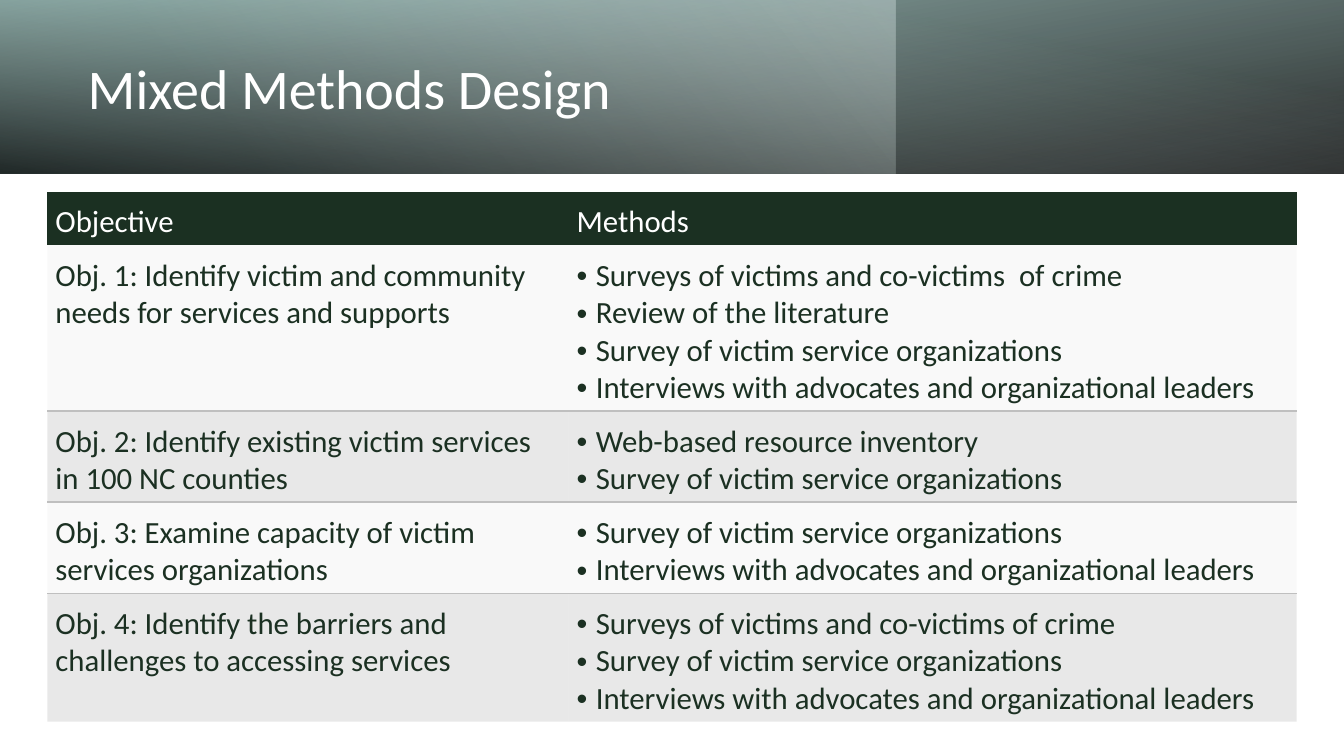
"""Build the Mixed Methods Design slide: gradient header band, title and objectives table."""
from lxml.etree import SubElement
from pptx import Presentation
from pptx.dml.color import RGBColor as RGB
from pptx.enum.text import MSO_ANCHOR as Anchor
from pptx.oxml.ns import qn
from pptx.util import Inches, Pt

BLACK, WHITE = RGB(0, 0, 0), RGB(255, 255, 255)
TEAL, MIST, PALE = RGB(0x92, 0xBA, 0xB5), RGB(0xD6, 0xE5, 0xE3), RGB(0xE6, 0xEF, 0xEE)
FOREST, LIGHT, SILVER = RGB(0x1B, 0x30, 0x22), RGB(0xF2, 0xF2, 0xF2), RGB(0xBF, 0xBF, 0xBF)

TITLE = "Mixed Methods Design"
HEADINGS = ("Objective", "Methods")
OBJECTIVES = [
    ("Obj. 1: Identify victim and community needs for services and supports",
     ["Surveys of victims and co-victims  of crime",
      "Review of the literature",
      "Survey of victim service organizations",
      "Interviews with advocates and organizational leaders"]),
    ("Obj. 2: Identify existing victim services in 100 NC counties",
     ["Web-based resource inventory",
      "Survey of victim service organizations"]),
    ("Obj. 3: Examine capacity of victim services organizations",
     ["Survey of victim service organizations ",
      "Interviews with advocates and organizational leaders"]),
    ("Obj. 4: Identify the barriers and challenges to accessing services",
     ["Surveys of victims and co-victims of crime",
      "Survey of victim service organizations",
      "Interviews with advocates and organizational leaders"]),
]

SLIDE_W, SLIDE_H = Inches(13.33), Inches(7.5)
BAND_H = Inches(1.72)
BANDS = [
    dict(share=1, rotation=180, flip=True, angle=100,
         stops=[(0, BLACK, 96), (100, TEAL, 100)]),
    dict(share=2 / 3, rotation=0, flip=False, angle=140,
         stops=[(0, MIST, 41), (74, PALE, 0)]),
    dict(share=1, rotation=0, flip=True, angle=260,
         stops=[(0, BLACK, 63), (78, MIST, 15)]),
]
TITLE_BOX = dict(left=Inches(0.77), top=Inches(0.27), width=Inches(7.72), height=Inches(1.27))
TABLE_BOX = dict(left=Inches(0.47), top=Inches(1.9), width=Inches(12.39), height=Inches(5.21))
COLUMN_WIDTHS = (5.17, 7.22)
ROW_HEIGHTS = (0.5, 1.19, 0.7, 0.7, 1.02)
CELL_FORMAT = dict(margin_left=Inches(0.08), margin_top=Inches(0.12),
                   margin_right=Inches(0.08), margin_bottom=Inches(0.04))
BULLET_INDENT = Inches(0.19)
NO_STYLE = "{2D5ABB26-0587-4C30-8999-92F81FD0307C}"


def apply(target, values):
    for name, value in values.items():
        setattr(target, name, value)


def add_color(parent, color, opacity=100):
    node = SubElement(parent, qn("a:srgbClr"), val=str(color))
    if opacity < 100:
        SubElement(node, qn("a:alpha"), val=str(opacity * 1000))


def add_band(slide, share, rotation, flip, angle, stops):
    band = slide.shapes.add_shape(1, 0, 0, int(SLIDE_W * share), BAND_H)
    band.shadow.inherit = False
    band.line.fill.background()
    band.rotation = rotation
    if flip:
        band._element.spPr.find(qn("a:xfrm")).set("flipH", "1")
    band.fill.gradient()
    gradient = band._element.spPr.find(qn("a:gradFill"))
    for child in list(gradient):
        gradient.remove(child)
    stop_list = SubElement(gradient, qn("a:gsLst"))
    for position, color, opacity in stops:
        stop = SubElement(stop_list, qn("a:gs"), pos=str(position * 1000))
        add_color(stop, color, opacity)
    SubElement(gradient, qn("a:lin"), ang=str(angle * 60000), scaled="0")


def write(paragraph, text, size, color):
    run = paragraph.add_run()
    run.text = text
    apply(run.font, dict(name="Calibri", size=Pt(size)))
    run.font.color.rgb = color


def add_bullet(paragraph):
    properties = paragraph._p.get_or_add_pPr()
    properties.set("marL", str(BULLET_INDENT))
    properties.set("indent", str(-BULLET_INDENT))
    SubElement(properties, qn("a:buFont"), typeface="Arial")
    SubElement(properties, qn("a:buChar"), char="•")


def fill_cell(cell, lines, color, fill, opacity=100, bulleted=False, edge=None):
    apply(cell, CELL_FORMAT)
    frame = cell.text_frame
    for index, line in enumerate(lines):
        paragraph = frame.add_paragraph() if index else frame.paragraphs[0]
        if bulleted:
            add_bullet(paragraph)
        write(paragraph, line, 22, color)
    properties = cell._tc.get_or_add_tcPr()
    if edge:
        border = SubElement(properties, qn(edge), w=str(Pt(1)))
        add_color(SubElement(border, qn("a:solidFill")), SILVER)
    add_color(SubElement(properties, qn("a:solidFill")), fill, opacity)


def add_objectives(slide):
    graphic = slide.shapes.add_table(len(ROW_HEIGHTS), len(COLUMN_WIDTHS), **TABLE_BOX)
    table = graphic.table
    table._tbl.tblPr.find(qn("a:tableStyleId")).text = NO_STYLE
    for column, width in zip(table.columns, COLUMN_WIDTHS):
        column.width = Inches(width)
    for row, height in zip(table.rows, ROW_HEIGHTS):
        row.height = Inches(height)
    for column, heading in enumerate(HEADINGS):
        fill_cell(table.cell(0, column), [heading], WHITE, FOREST)
        table.cell(0, column).vertical_anchor = Anchor.MIDDLE
    for row, (objective, methods) in enumerate(OBJECTIVES, 1):
        fill, opacity, edge = (LIGHT, 45, "a:lnB") if row % 2 else (SILVER, 35, "a:lnT")
        for column, lines in enumerate(([objective], methods)):
            fill_cell(table.cell(row, column), lines, FOREST, fill, opacity, column == 1, edge)
    graphic.height = TABLE_BOX["height"]


def main():
    deck = Presentation()
    apply(deck, dict(slide_width=SLIDE_W, slide_height=SLIDE_H))
    slide = deck.slides.add_slide(deck.slide_layouts[5])
    title = slide.shapes.title
    for band in BANDS:
        add_band(slide, **band)
    slide.shapes._spTree.append(title._element)
    apply(title, TITLE_BOX)
    apply(title.text_frame, dict(vertical_anchor=Anchor.MIDDLE, word_wrap=True))
    heading = title.text_frame.paragraphs[0]
    apply(heading, dict(alignment=1, line_spacing=0.9))
    write(heading, TITLE, 40, WHITE)
    add_objectives(slide)
    deck.save("out.pptx")


if __name__ == "__main__":
    main()
